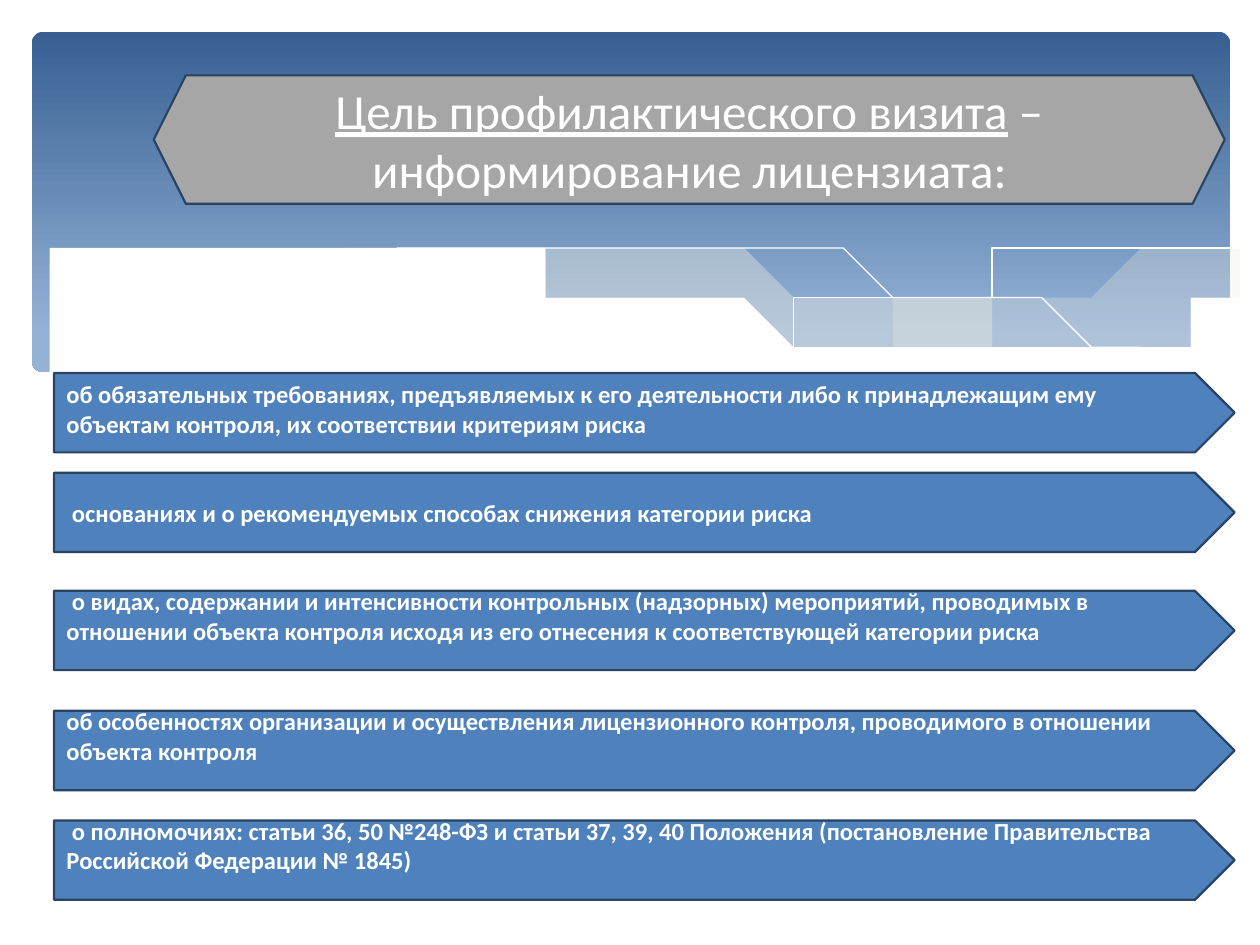
from dataclasses import dataclass
from typing import NamedTuple

from lxml import etree
from pptx import Presentation
from pptx import util as u
from pptx.dml.color import RGBColor
from pptx.enum import shapes, text
from pptx.oxml.ns import qn


@dataclass(frozen=True)
class Theme:
    font: str = "Calibri"
    title_size: u.Pt = u.Pt(28)
    item_size: u.Pt = u.Pt(14)
    outline_width: u.Pt = u.Pt(1.25)
    white: RGBColor = RGBColor(0xFF, 0xFF, 0xFF)
    sky_top: RGBColor = RGBColor(0x37, 0x60, 0x92)
    sky_bottom: RGBColor = RGBColor(0x95, 0xB3, 0xD7)
    mist: RGBColor = RGBColor(0xEE, 0xEC, 0xE1)
    banner: RGBColor = RGBColor(0xA6, 0xA6, 0xA6)
    arrow: RGBColor = RGBColor(0x4F, 0x81, 0xBD)
    outline: RGBColor = RGBColor(0x29, 0x43, 0x63)


class Point(NamedTuple):
    x: float
    y: float


class Box(NamedTuple):
    left: float
    top: float
    width: float
    height: float

    def lengths(self) -> list:
        return [u.Cm(value) for value in self]


@dataclass(frozen=True)
class Topic:
    top: float
    wording: str
    lift: float  # points the text sits above the middle of its arrow


@dataclass(frozen=True)
class Wave:
    edges: tuple  # each edge is a smooth curve through its points
    opacity: int = 100
    corners: tuple = ()


THEME = Theme()
BANNER = Box(3.1, 1.52, 21.59, 2.59)
TITLE = Box(4.1, 1.52, 19.59, 2.59)
TOPICS = [
    Topic(7.52, "об обязательных требованиях, предъявляемых к его деятельности либо "
          "к принадлежащим ему объектам контроля, их соответствии критериям риска", 2.4),
    Topic(9.53, " основаниях и о рекомендуемых способах снижения категории риска", 0),
    Topic(11.91, " о видах, содержании и интенсивности контрольных (надзорных) мероприятий, "
          "проводимых в отношении объекта контроля исходя из его отнесения "
          "к соответствующей категории риска", 8.4),
    Topic(14.33, "об особенностях организации и осуществления лицензионного контроля, "
          "проводимого в отношении объекта контроля", 8.4),
    Topic(16.54, " о полномочиях: статьи 36, 50 №248-ФЗ и статьи 37, 39, 40 Положения "
          "(постановление Правительства Российской Федерации № 1845)", 8.4),
]

RIGHT_MIST = Wave((
    ((24.79, 5.08), (23.39, 5.33), (21.87, 5.66), (19.13, 6.3), (16.79, 6.73)),
    ((16.79, 6.73), (18.26, 6.91), (20.4, 7.06), (22.15, 6.96), (23.57, 6.68),
     (24.79, 6.27)),
), opacity=29)
LEFT_MIST = Wave((
    ((22.68, 6.93), (20.5, 6.6), (17.93, 6.1), (15.98, 5.64), (13.74, 5.16),
     (11.81, 4.85), (9.65, 4.7), (8.33, 4.75), (7.26, 4.85)),
    ((7.26, 4.85), (9.19, 5.16), (11.4, 5.64), (14.38, 6.3), (16.89, 6.76),
     (19, 7.01), (20.78, 7.06), (22.68, 6.93)),
), opacity=40)
FALLING_LINE = ((7.85, 4.95), (8.97, 4.8), (10.57, 4.75), (12.95, 4.88), (15.44, 5.18),
                (17.65, 5.56), (20.19, 6.12), (23.04, 6.91))
RISING_LINE = ((15.57, 6.53), (17.65, 5.97), (20.47, 5.33), (22.73, 4.93), (24.77, 4.7))
FOREGROUND = Wave((
    ((24.82, 6.25), (23.62, 6.65), (22.23, 6.93), (20.55, 7.04), (18.44, 6.91),
     (15.9, 6.55), (13.44, 6.07), (11.35, 5.59), (8.64, 5), (6.88, 4.78),
     (4.9, 4.67), (3.02, 4.75), (1.7, 5), (0.58, 5.41)),
), corners=((0.58, 8.36), (24.82, 8.36)))


def smooth(knots: tuple, steps: int = 6) -> list[Point]:
    """Points of a Catmull-Rom curve through the knots."""
    padded = (knots[0], *knots, knots[-1])
    curve = [Point(*knots[0])]
    for a, b, c, d in zip(padded, padded[1:], padded[2:], padded[3:]):
        for step in range(1, steps + 1):
            t = step / steps
            curve.append(Point(*(
                (2 * q + (r - p) * t + (2 * p - 5 * q + 4 * r - s) * t**2
                 + (3 * q - p - 3 * r + s) * t**3) / 2
                for p, q, r, s in zip(a, b, c, d))))
    return curve


def draw_outline(slide, points: list, closed: bool):
    start, *rest = points
    builder = slide.shapes.build_freeform(*start, scale=u.Cm(1))
    builder.add_line_segments(rest, close=closed)
    outline = builder.convert_to_shape()
    outline.shadow.inherit = False
    return outline


def draw_wave(slide, wave: Wave, color: RGBColor) -> None:
    points = [point for edge in wave.edges for point in smooth(edge)]
    band = draw_outline(slide, points + list(wave.corners), closed=True)
    band.line.fill.background()
    band.fill.solid()
    band.fill.fore_color.rgb = color
    if wave.opacity < 100:
        tint = band.element.spPr.find(f"{qn('a:solidFill')}/{qn('a:srgbClr')}")
        etree.SubElement(tint, qn("a:alpha")).set("val", str(wave.opacity * 1000))


def draw_hairline(slide, knots: tuple) -> None:
    hairline = draw_outline(slide, smooth(knots), closed=False)
    hairline.fill.background()
    hairline.line.color.rgb = THEME.white
    hairline.line.width = u.Pt(0)


def draw_sky(slide) -> None:
    sky = slide.shapes.add_shape(shapes.MSO_SHAPE.ROUNDED_RECTANGLE,
                                 *Box(0.64, 0.64, 24.16, 6.86).lengths())
    sky.adjustments[0] = 0.034
    sky.shadow.inherit = False
    sky.line.fill.background()
    sky.fill.gradient()
    sky.fill.gradient_angle = 270
    stops = ((0, THEME.sky_top), (0.9, THEME.sky_bottom))
    for stop, (position, color) in zip(sky.fill.gradient_stops, stops):
        stop.position = position
        stop.color.rgb = color


def draw_panel(slide, kind: shapes.MSO_SHAPE, box: Box, color: RGBColor):
    panel = slide.shapes.add_shape(kind, *box.lengths())
    panel.shadow.inherit = False
    panel.fill.solid()
    panel.fill.fore_color.rgb = color
    panel.line.color.rgb = THEME.outline
    panel.line.width = THEME.outline_width
    return panel


def set_font(paragraph, size: u.Pt, bold: bool) -> None:
    paragraph.font.name = THEME.font
    paragraph.font.size = size
    paragraph.font.bold = bold
    paragraph.font.color.rgb = THEME.white


def draw_topic(slide, topic: Topic) -> None:
    arrow = draw_panel(slide, shapes.MSO_SHAPE.PENTAGON,
                       Box(1.09, topic.top, 23.8, 1.6), THEME.arrow)
    frame = arrow.text_frame
    frame.word_wrap = True
    frame.vertical_anchor = text.MSO_ANCHOR.MIDDLE
    frame.margin_top = 0
    frame.margin_bottom = u.Pt(2 * topic.lift)
    wording = frame.paragraphs[0]
    wording.text = topic.wording
    wording.alignment = text.PP_ALIGN.LEFT
    set_font(wording, THEME.item_size, bold=True)


def place_title(slide) -> None:
    title = slide.shapes.title
    title.left, title.top, title.width, title.height = TITLE.lengths()
    frame = title.text_frame
    frame.auto_size = text.MSO_AUTO_SIZE.NONE
    frame.word_wrap = True
    frame.vertical_anchor = text.MSO_ANCHOR.MIDDLE
    frame.margin_top = frame.margin_bottom = 0
    heading = frame.paragraphs[0]
    heading.alignment = text.PP_ALIGN.CENTER
    set_font(heading, THEME.title_size, bold=False)
    goal = heading.add_run()
    goal.text = "Цель профилактического визита"
    goal.font.underline = True
    heading.add_run().text = " – информирование лицензиата:"
    # Bring the title in front of its banner
    title.element.getparent().append(title.element)


def main() -> None:
    deck = Presentation()
    deck.slide_width, deck.slide_height = u.Cm(25.4), u.Cm(19.05)
    slide = deck.slides.add_slide(deck.slide_layouts.get_by_name("Title Only"))

    # Header scenery
    draw_sky(slide)
    draw_wave(slide, RIGHT_MIST, THEME.mist)
    draw_wave(slide, LEFT_MIST, THEME.mist)
    for knots in (FALLING_LINE, RISING_LINE):
        draw_hairline(slide, knots)
    draw_wave(slide, FOREGROUND, THEME.white)

    # Topics of the visit
    for topic in TOPICS:
        draw_topic(slide, topic)

    # Title on its banner
    draw_panel(slide, shapes.MSO_SHAPE.HEXAGON, BANNER, THEME.banner)
    place_title(slide)
    deck.save("out.pptx")


if __name__ == "__main__":
    main()
